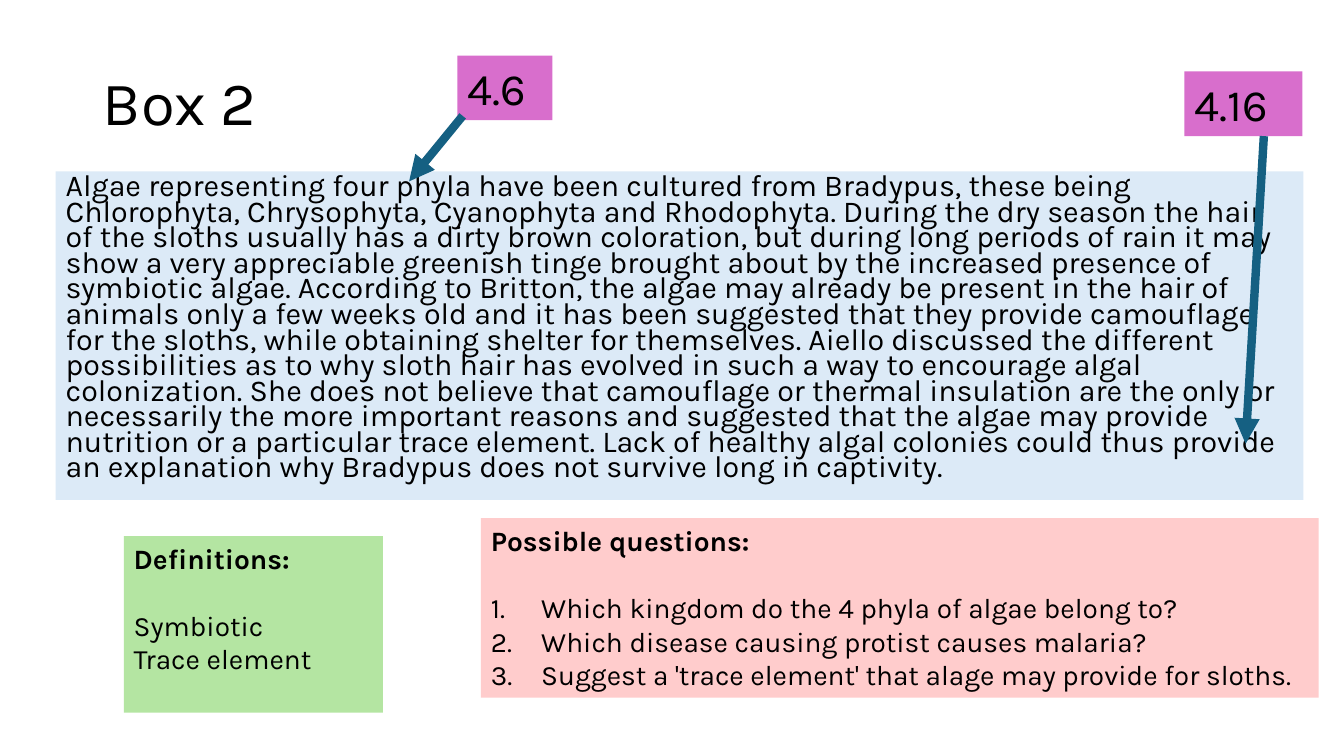
from lxml.etree import SubElement
from pptx import Presentation
from pptx.dml.color import RGBColor
from pptx.enum.shapes import MSO_CONNECTOR as Connector
from pptx.enum.text import MSO_ANCHOR as Anchor, MSO_AUTO_SIZE as AutoSize, PP_ALIGN as Align
from pptx.oxml.ns import qn
from pptx.util import Cm, Pt

FONT = "Karla"
BLACK = RGBColor(0x00, 0x00, 0x00)
PALE_BLUE = RGBColor(0xDC, 0xEA, 0xF7)
GREEN = RGBColor(0xB4, 0xE5, 0xA2)
PINK = RGBColor(0xFF, 0xCC, 0xCC)
MAGENTA = RGBColor(0xD8, 0x6E, 0xCC)
TEAL = RGBColor(0x15, 0x60, 0x82)

SENTENCES = [
    "Algae representing four phyla have been cultured from Bradypus, these being "
    "Chlorophyta, Chrysophyta, Cyanophyta and Rhodophyta.",
    "During the dry season the hair of the sloths usually has a dirty brown coloration, "
    "but during long periods of rain it may show a very appreciable greenish tinge "
    "brought about by the increased presence of symbiotic algae.",
    "According to Britton, the algae may already be present in the hair of animals only "
    "a few weeks old and it has been suggested that they provide camouflage for the "
    "sloths, while obtaining shelter for themselves.",
    "Aiello discussed the different possibilities as to why sloth hair has evolved in "
    "such a way to encourage algal colonization.",
    "She does not believe that camouflage or thermal insulation are the only or "
    "necessarily the more important reasons and suggested that the algae may provide "
    "nutrition or a particular trace element.",
    "Lack of healthy algal colonies could thus provide an explanation why Bradypus does "
    "not survive long in captivity.",
]
TERMS = ["Symbiotic", "Trace element"]
QUESTIONS = [
    "Which kingdom do the 4 phyla of algae belong to?",
    "Which disease causing protist causes malaria?",
    "Suggest a 'trace element' that alage may provide for sloths.",
]


def place(part, left, top, width, height):
    """Move and size a part, with lengths in centimetres."""
    part.left, part.top, part.width, part.height = map(Cm, (left, top, width, height))


def style(paragraph, size, bold=False):
    """Format a paragraph and its runs."""
    paragraph.alignment = Align.LEFT
    for run in paragraph.runs:
        run.font.name = FONT
        run.font.size = Pt(size)
        run.font.bold = bold
        run.font.color.rgb = BLACK


def set_marker(paragraph, tag, indent=0, **attributes):
    """Give a paragraph its list marker and hanging indent."""
    properties = paragraph._p.get_or_add_pPr()
    properties.set("marL", str(Cm(indent)))
    properties.set("indent", str(-Cm(indent)))
    SubElement(properties, qn(tag), attributes)


def fill_placeholder(holder, text, box, size, line_spacing, anchor):
    """Write and format one paragraph in a template placeholder."""
    place(holder, *box)
    frame = holder.text_frame
    frame.text = text
    frame.auto_size = AutoSize.NONE
    frame.vertical_anchor = anchor
    paragraph = frame.paragraphs[0]
    paragraph.line_spacing = line_spacing
    style(paragraph, size)
    return paragraph


def add_panel(slide, box, color, text, size, bold=False):
    """Add a coloured text box and return its text frame."""
    panel = slide.shapes.add_textbox(*map(Cm, box))
    panel.fill.solid()
    panel.fill.fore_color.rgb = color
    frame = panel.text_frame
    frame.word_wrap = True
    frame.text = text
    style(frame.paragraphs[0], size, bold)
    return frame


def add_list_panel(slide, box, color, heading, items, numbered=False):
    """Add a panel with a bold heading and a list set one line below it."""
    frame = add_panel(slide, box, color, heading, 20, bold=True)
    for position, item in enumerate(items):
        entry = frame.add_paragraph()
        entry.text = item
        entry.space_before = Pt(0 if position else 24)
        style(entry, 20)
        if numbered:
            set_marker(entry, "a:buAutoNum", 1.27, type="arabicPeriod")


def add_arrow(slide, start, end):
    """Add a thick arrow between two points."""
    arrow = slide.shapes.add_connector(Connector.STRAIGHT, *map(Cm, start + end))
    arrow.line.color.rgb = TEAL
    arrow.line.width = Pt(6)
    SubElement(arrow.line._get_or_add_ln(), qn("a:tailEnd"), type="triangle")
    SubElement(arrow._element.spPr, qn("a:effectLst"))


def main():
    """Build the slide and save it."""
    deck = Presentation()
    deck.slide_width, deck.slide_height = Cm(33.87), Cm(19.05)
    slide = deck.slides.add_slide(deck.slide_layouts[1])

    fill_placeholder(slide.shapes.title, "Box 2", (2.34, 1.02, 26.64, 3.3), 44, 0.9, Anchor.MIDDLE)
    reading = slide.placeholders[1]
    passage = fill_placeholder(
        reading, " ".join(SENTENCES), (1.4, 4.32, 31.45, 8.28), 21.7, 0.7, Anchor.TOP
    )
    passage.space_before = Pt(10)
    set_marker(passage, "a:buNone")
    reading.fill.solid()
    reading.fill.fore_color.rgb = PALE_BLUE

    add_list_panel(slide, (3.12, 13.51, 6.53, 4.45), GREEN, "Definitions:", TERMS)
    add_panel(slide, (11.53, 1.4, 2.39, 1.63), MAGENTA, "4.6", 32)
    add_arrow(slide, (11.66, 2.92), (10.31, 4.57))
    add_list_panel(slide, (12.12, 13.06, 21.11, 4.52), PINK, "Possible questions:", QUESTIONS, numbered=True)
    add_panel(slide, (29.85, 1.8, 2.97, 1.63), MAGENTA, "4.16", 32)
    add_arrow(slide, (31.85, 3.43), (31.39, 11.18))

    deck.save("out.pptx")


if __name__ == "__main__":
    main()
